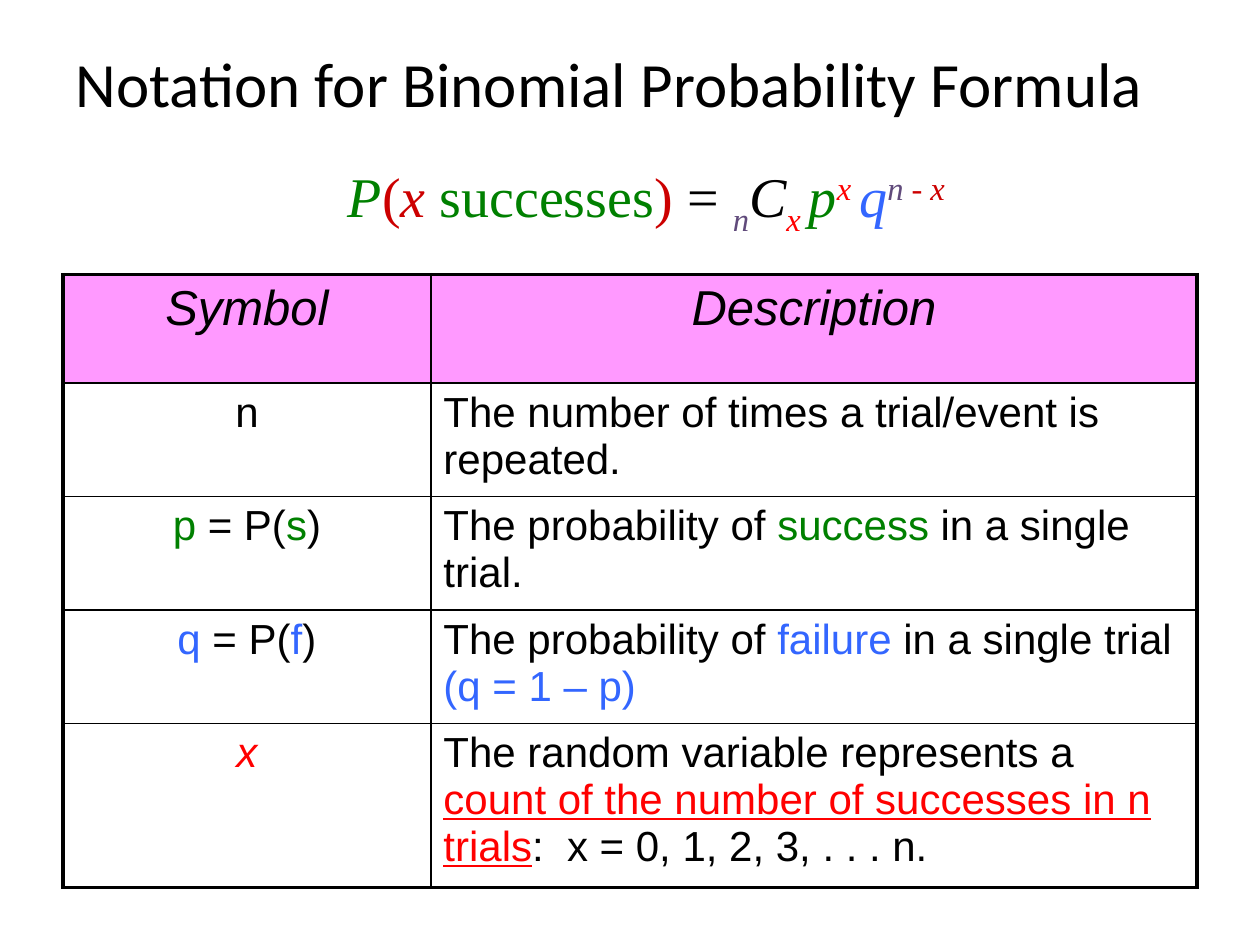
from lxml import etree
from pptx import Presentation
from pptx.dml.color import RGBColor
from pptx.enum.text import MSO_ANCHOR, MSO_AUTO_SIZE, PP_ALIGN
from pptx.oxml.ns import qn
from pptx.util import Inches, Pt

LEFT, CENTER = PP_ALIGN.LEFT, PP_ALIGN.CENTER
MIDDLE = MSO_ANCHOR.MIDDLE
GROW = MSO_AUTO_SIZE.SHAPE_TO_FIT_TEXT

COLORS = {
    "black": "000000", "pink": "FF99FF", "green": "008000", "blue": "3366FF",
    "red": "FF0000", "dark": "CC0000", "plum": "604A7B",
}


def write(para, parts, font, size, align):
    para.alignment = align
    for text, color, style, base in parts:
        run = para.add_run()
        run.text = text
        run.font.name = font
        run.font.size = Pt(size)
        run.font.bold = False
        run.font.italic = "i" in style
        run.font.underline = "u" in style
        run.font.color.rgb = RGBColor.from_string(COLORS[color])
        if base:
            run._r.get_or_add_rPr().set("baseline", str(base * 1000))


def border(cell, widths):
    props = cell._tc.get_or_add_tcPr()
    for spot, (side, width) in enumerate(zip("LRTB", widths)):
        line = etree.Element(qn("a:ln" + side), w=str(Pt(width)))
        paint = etree.SubElement(line, qn("a:solidFill"))
        etree.SubElement(paint, qn("a:srgbClr"), val=COLORS["black"])
        props.insert(spot, line)


deck = Presentation()
deck.slide_width = Inches(10)
deck.slide_height = Inches(7.5)
slide = deck.slides.add_slide(deck.slide_layouts[5])

title = slide.shapes.title
title.left, title.top = Inches(0.5), Inches(0.03)
title.width, title.height = Inches(9), Inches(1.25)
title.text_frame.vertical_anchor = MIDDLE
write(title.text_frame.paragraphs[0],
      [("Notation for Binomial Probability Formula", "black", "", 0)],
      "Calibri", 36, LEFT)

rule = slide.shapes.add_textbox(Inches(1.6), Inches(1.23), Inches(7.06), Inches(0.64))
rule.text_frame.word_wrap = True
rule.text_frame.auto_size = GROW
terms = [
    ("P", "green", "i", 0), ("(", "dark", "", 0), ("x ", "dark", "i", 0),
    ("successes", "green", "", 0), (") ", "dark", "", 0), ("= ", "black", "", 0),
    ("n", "plum", "i", -25), ("C", "black", "i", 0), ("x ", "red", "i", -25),
    ("p", "green", "i", 0), ("x ", "red", "i", 30), ("q", "blue", "i", 0),
    ("n", "plum", "i", 30), (" - ", "dark", "", 30), ("x", "dark", "i", 30),
]
write(rule.text_frame.paragraphs[0], terms, "Times New Roman", 32, CENTER)

rows = [
    ([("Symbol", "black", "i", 0)], [("Description", "black", "i", 0)]),
    ([("n", "black", "", 0)],
     [("The number of times a trial/event is repeated.", "black", "", 0)]),
    ([("p", "green", "", 0), (" = P(", "black", "", 0),
      ("s", "green", "", 0), (")", "black", "", 0)],
     [("The probability of ", "black", "", 0), ("success", "green", "", 0),
      (" in a single trial.", "black", "", 0)]),
    ([("q", "blue", "", 0), (" = P(", "black", "", 0),
      ("f", "blue", "", 0), (")", "black", "", 0)],
     [("The probability of ", "black", "", 0), ("failure", "blue", "", 0),
      (" in a single trial ", "black", "", 0), ("(q = 1 – p)", "blue", "", 0)]),
    ([("x", "red", "i", 0)],
     [("The random variable represents a ", "black", "", 0),
      ("count of the number of successes in n trials", "red", "u", 0),
      (":  x = 0, 1, 2, 3, . . . n.", "black", "", 0)]),
]
heights = [0.86, 0.86, 0.87, 0.86, 1.14]
last = len(rows) - 1
table = slide.shapes.add_table(len(rows), 2, Inches(0.5), Inches(2.18),
                               Inches(9), Inches(sum(heights))).table
table.first_row = False
table.horz_banding = False
table.columns[0].width = Inches(2.92)
table.columns[1].width = Inches(6.08)

for r, (row, height) in enumerate(zip(rows, heights)):
    table.rows[r].height = Inches(height)
    for c, parts in enumerate(row):
        cell = table.cell(r, c)
        head = r == 0
        if head:
            cell.fill.solid()
            cell.fill.fore_color.rgb = RGBColor.from_string(COLORS["pink"])
        else:
            cell.fill.background()
        edges = (c == 0, c == 1, head, r == last)
        border(cell, [2.25 if edge else 1 for edge in edges])
        para = cell.text_frame.paragraphs[0]
        write(para, parts, "Arial", 28 if head else 24,
              CENTER if head or c == 0 else LEFT)
        gap = etree.SubElement(para._p.get_or_add_pPr(), qn("a:spcBef"))
        etree.SubElement(gap, qn("a:spcPct"), val="20000")

deck.save("out.pptx")
